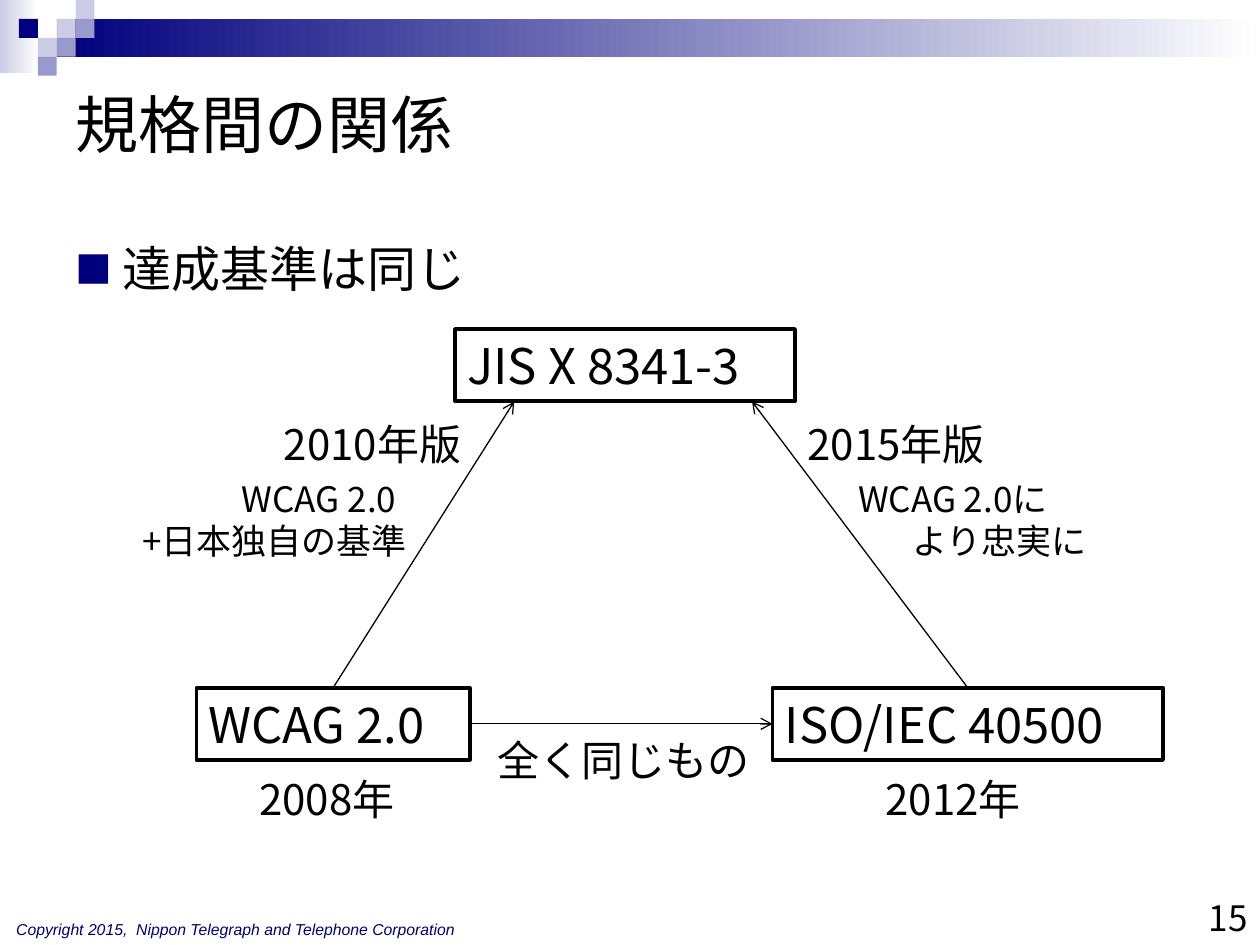
from dataclasses import dataclass

from lxml.etree import SubElement
from pptx import Presentation
from pptx.dml.color import RGBColor
from pptx.enum.shapes import MSO_CONNECTOR, MSO_SHAPE
from pptx.enum.text import MSO_ANCHOR, PP_ALIGN
from pptx.oxml.ns import qn
from pptx.util import Pt


@dataclass(frozen=True)
class Theme:
    black: str = "000000"
    white: str = "FFFFFF"
    navy: str = "00007D"
    pale: str = "CCCCE6"
    mid: str = "9999CC"
    credit: str = "000066"
    font: str = "Noto Sans CJK JP"
    credit_font: str = "Arial"
    title: float = 36
    body: float = 28
    label: float = 24
    note: float = 20
    small: float = 9
    leading: float = 1.21


T = Theme()


@dataclass(frozen=True)
class Rect:
    x: float
    y: float
    w: float
    h: float


@dataclass(frozen=True)
class Line:
    text: str
    size: float
    indent: float = 0
    spacing: float = 0  # exact line pitch in points, 0 for the font's own


@dataclass(frozen=True)
class Standard:
    name: str
    box: Rect


@dataclass(frozen=True)
class Label:
    box: Rect
    lines: tuple
    wrap: bool = True


def pitch(size: float) -> float:
    return round(size * T.leading, 1)


def set_text(sp, lines, anchor=MSO_ANCHOR.TOP, align=PP_ALIGN.LEFT, wrap=True,
             color=T.black, font=T.font, italic=False):
    tf = sp.text_frame
    tf.word_wrap = wrap
    tf.vertical_anchor = anchor
    for i, line in enumerate(lines):
        p = tf.paragraphs[0] if i == 0 else tf.add_paragraph()
        p.alignment = align
        if line.spacing:
            p.line_spacing = Pt(line.spacing)
        if line.indent:
            p._p.get_or_add_pPr().set("marL", str(Pt(line.indent)))
        r = p.add_run()
        r.text = line.text
        r.font.size = Pt(line.size)
        r.font.italic = italic
        r.font.color.rgb = RGBColor.from_string(color)
        r.font.name = font
        SubElement(r._r.get_or_add_rPr(), qn("a:ea"), typeface=font)
    return tf


def add_text(s, box: Rect, lines, **style):
    sp = s.shapes.add_textbox(Pt(box.x), Pt(box.y), Pt(box.w), Pt(box.h))
    return set_text(sp, lines, **style)


def add_rect(s, box: Rect, fill: str, fade: str = ""):
    sp = s.shapes.add_shape(MSO_SHAPE.RECTANGLE, Pt(box.x), Pt(box.y), Pt(box.w), Pt(box.h))
    sp.shadow.inherit = False
    sp.line.fill.background()
    if fade:
        sp.fill.gradient()
        sp.fill.gradient_angle = 0
        for stop, color, position in zip(sp.fill.gradient_stops, (fill, fade), (0, 1)):
            stop.color.rgb = RGBColor.from_string(color)
            stop.position = position
    else:
        sp.fill.solid()
        sp.fill.fore_color.rgb = RGBColor.from_string(fill)
    return sp


def add_standard(s, std: Standard):
    sp = add_rect(s, std.box, T.white)
    sp.line.color.rgb = RGBColor.from_string(T.black)
    sp.line.width = Pt(2)
    tf = set_text(sp, [Line(std.name, T.body)], anchor=MSO_ANCHOR.MIDDLE)
    tf.margin_top = tf.margin_bottom = 0
    return sp


def add_arrow(s, start, start_site: int, tip=(0, 0), end=None, end_site: int = 0):
    cn = s.shapes.add_connector(MSO_CONNECTOR.STRAIGHT, 0, 0, Pt(tip[0]), Pt(tip[1]))
    cn.begin_connect(start, start_site)
    if end is not None:
        cn.end_connect(end, end_site)
    cn.line.color.rgb = RGBColor.from_string(T.black)
    cn.line.width = Pt(0.75)
    SubElement(cn.line._get_or_add_ln(), qn("a:tailEnd"), type="arrow")
    SubElement(cn._element.spPr, qn("a:effectLst"))


def add_bullet(p, color: str):
    pPr = p._p.get_or_add_pPr()
    pPr.set("marL", str(Pt(27)))
    pPr.set("indent", str(-Pt(27)))
    SubElement(SubElement(pPr, qn("a:buClr")), qn("a:srgbClr"), val=color)
    SubElement(pPr, qn("a:buSzPct"), val="75000")
    SubElement(pPr, qn("a:buFont"), typeface=T.font)
    SubElement(pPr, qn("a:buChar"), char="■")


CELL = 10.8
SQUARES = [(3, 1, T.pale), (4, 0, T.pale), (4, 1, T.mid), (2, 2, T.pale),
           (1, 1, T.navy), (3, 2, T.mid), (2, 3, T.mid)]  # column, row, colour

JIS = Standard("JIS X 8341-3", Rect(260, 188, 194.4, 41.3))
WCAG = Standard("WCAG 2.0", Rect(112.3, 393, 156.2, 41.3))
ISO = Standard("ISO/IEC 40500", Rect(441.4, 393, 223.2, 41.3))

BIG, SMALL = pitch(T.label), pitch(T.note)
LABELS = [
    Label(Rect(30.2, 235.4, 270.7, 90),
          (Line("2010年版", T.label, 125, BIG),
           Line("WCAG 2.0", T.note, 101, BIG),
           Line("+日本独自の基準", T.note, 44, SMALL))),
    Label(Rect(454.3, 235.4, 234, 90),
          (Line("2015年版", T.label, 0, BIG),
           Line("WCAG 2.0に", T.note, 29, BIG),
           Line("より忠実に", T.note, 60, SMALL))),
    Label(Rect(141.1, 438.5, 98.6, 36), (Line("2008年", T.label, 0, BIG),), False),
    Label(Rect(499, 438.5, 98.6, 36), (Line("2012年", T.label, 0, BIG),), False),
    Label(Rect(277.2, 416.2, 159.8, 36), (Line("全く同じもの", T.label, 0, BIG),), False),
]


def main():
    prs = Presentation()
    prs.slide_width, prs.slide_height = Pt(720), Pt(540)
    s = prs.slides.add_slide(prs.slide_layouts[6])

    # Header band and squares
    add_rect(s, Rect(0, 0, 22, 41.8), T.pale, T.white)
    add_rect(s, Rect(3 * CELL, CELL, 720 - 3 * CELL, 2 * CELL), T.navy, T.white)
    for col, row, color in SQUARES:
        add_rect(s, Rect(col * CELL, row * CELL, CELL, CELL), color)

    # Footer
    add_text(s, Rect(2.2, 522, 290.9, 17.3),
             [Line("Copyright 2015,  Nippon Telegraph and Telephone Corporation", T.small)],
             color=T.credit, font=T.credit_font, italic=True)
    add_text(s, Rect(552.2, 504, 167.8, 36), [Line("15", T.note)],
             anchor=MSO_ANCHOR.BOTTOM, align=PP_ALIGN.RIGHT)

    # Title and bullet
    add_text(s, Rect(36, 33.1, 643, 74.9), [Line("規格間の関係", T.title)],
             anchor=MSO_ANCHOR.MIDDLE)
    tf = add_text(s, Rect(36, 132.5, 648, 331),
                  [Line("達成基準は同じ", T.body, 0, pitch(T.body))])
    add_bullet(tf.paragraphs[0], T.navy)

    # Standards and the arrows between them
    jis, wcag, iso = [add_standard(s, std) for std in (JIS, WCAG, ISO)]
    add_arrow(s, wcag, 0, tip=(293.8, 229.5))
    add_arrow(s, wcag, 3, end=iso, end_site=1)
    add_arrow(s, iso, 0, tip=(429.8, 229.5))

    # Labels
    for label in LABELS:
        add_text(s, label.box, label.lines, wrap=label.wrap)

    prs.save("out.pptx")


if __name__ == "__main__":
    main()
